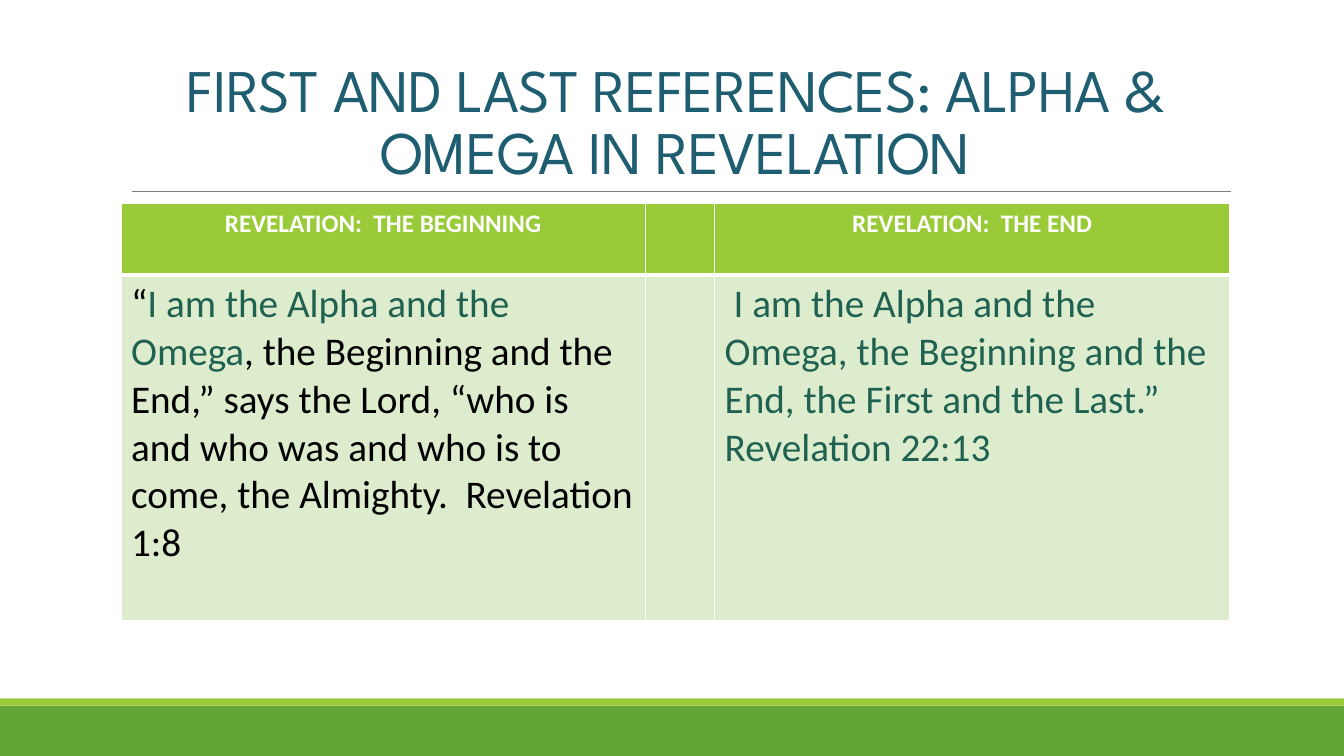
from dataclasses import dataclass

from lxml import etree
from pptx import Presentation
from pptx.dml.color import RGBColor
from pptx.enum.shapes import MSO_CONNECTOR, MSO_SHAPE
from pptx.enum.text import MSO_ANCHOR, MSO_AUTO_SIZE, PP_ALIGN
from pptx.oxml.ns import qn
from pptx.util import Cm, Pt

RECT = MSO_SHAPE.RECTANGLE
LINE = MSO_CONNECTOR.STRAIGHT
BOTTOM = MSO_ANCHOR.BOTTOM
FIXED = MSO_AUTO_SIZE.NONE
CENTER, LEFT = PP_ALIGN.CENTER, PP_ALIGN.LEFT


@dataclass(frozen=True)
class Theme:
    green: str = "63A537"
    lime: str = "99CB38"
    pale: str = "DEECCE"
    rule: str = "808080"
    title: str = "1E5E70"
    quote: str = "206252"
    ink: str = "000000"
    white: str = "FFFFFF"
    display: str = "League Spartan"
    text: str = "Calibri"
    title_size: float = 43.2
    head_size: int = 18
    body_size: int = 28


THEME = Theme()
WIDTH, HEIGHT = 33.87, 19.05
TITLE = "FIRST AND LAST REFERENCES: ALPHA & OMEGA IN REVELATION"
HEADS = ["REVELATION:  THE BEGINNING", "", "REVELATION:  THE END"]
QUOTES = [
    [
        ("“", THEME.ink),
        ("I am the Alpha and the Omega", THEME.quote),
        (
            ", the Beginning and the End,” says the Lord, “who is and who was "
            "and who is to come, the Almighty.  Revelation 1:8",
            THEME.ink,
        ),
    ],
    [],
    [
        (
            " I am the Alpha and the Omega, the Beginning and the End, "
            "the First and the Last.”  Revelation 22:13",
            THEME.quote,
        ),
    ],
]


def format_all(item, values):
    for name, value in values.items():
        setattr(item, name, value)


def paint(fill, color):
    fill.solid()
    fill.fore_color.rgb = RGBColor.from_string(color)


def add_run(para, text, color, **font):
    run = para.add_run()
    run.text = text
    format_all(run.font, font)
    run.font.color.rgb = RGBColor.from_string(color)
    return run


def add_footer(slide, left, top, width, height):
    strip = 0.18
    bands = [
        (top + strip, height - strip, THEME.green),
        (top, strip, THEME.lime),
    ]
    for start, tall, color in bands:
        band = slide.shapes.add_shape(RECT, Cm(left), Cm(start), Cm(width), Cm(tall))
        band.shadow.inherit = False
        paint(band.fill, color)
        band.line.fill.background()


def add_title(slide, left, top, width, height):
    title = slide.shapes.title
    format_all(title, {
        "left": Cm(left), "top": Cm(top),
        "width": Cm(width), "height": Cm(height),
    })
    frame = title.text_frame
    format_all(frame, {
        "word_wrap": True, "auto_size": FIXED, "vertical_anchor": BOTTOM,
    })
    para = frame.paragraphs[0]
    format_all(para, {"alignment": CENTER, "line_spacing": 0.85})
    run = add_run(para, TITLE, THEME.title,
                  name=THEME.display, size=Pt(THEME.title_size))
    run.font.bold = False
    run._r.get_or_add_rPr().set("spc", "-50")

    base = Cm(top + height)
    rule = slide.shapes.add_connector(
        LINE, Cm(left + 0.28), base, Cm(left + width + 0.02), base)
    rule.line.width = Pt(0.5)
    rule.line.color.rgb = RGBColor.from_string(THEME.rule)
    etree.SubElement(rule._element.spPr, qn("a:effectLst"))


def add_edges(cell, base):
    props = cell._tc.get_or_add_tcPr()
    for side, points in {"L": 1, "R": 1, "T": 1, "B": base}.items():
        edge = etree.SubElement(props, qn(f"a:ln{side}"), w=str(Pt(points)))
        fill = etree.SubElement(edge, qn("a:solidFill"))
        etree.SubElement(fill, qn("a:srgbClr"), val=THEME.white)


def fill_cell(cell, runs, color, base, align, font):
    add_edges(cell, base)
    paint(cell.fill, color)
    para = cell.text_frame.paragraphs[0]
    para.alignment = align
    for text, ink in runs:
        add_run(para, text, ink, name=THEME.text, **font)


def add_verses(slide, left, top, width, height):
    head, gap, last = 1.8, 1.75, 12.98
    table = slide.shapes.add_table(
        2, 3, Cm(left), Cm(top), Cm(width), Cm(height)).table
    table.horz_banding = False
    for column, size in zip(table.columns, [width - gap - last, gap, last]):
        column.width = Cm(size)
    for row, size in zip(table.rows, [head, height - head]):
        row.height = Cm(size)

    titles = [[(text, THEME.white)] if text else [] for text in HEADS]
    rows = [
        (titles, THEME.lime, 3, CENTER,
         {"size": Pt(THEME.head_size), "bold": True}),
        (QUOTES, THEME.pale, 1, LEFT,
         {"size": Pt(THEME.body_size), "bold": False}),
    ]
    for row, (cells, *style) in zip(table.rows, rows):
        for cell, runs in zip(row.cells, cells):
            fill_cell(cell, runs, *style)


def main():
    deck = Presentation()
    format_all(deck, {"slide_width": Cm(WIDTH), "slide_height": Cm(HEIGHT)})
    slide = deck.slides.add_slide(deck.slide_layouts[5])
    paint(slide.background.fill, THEME.white)
    left, width = 3.05, 27.94
    add_footer(slide, 0, 17.6, WIDTH, HEIGHT - 17.6)
    add_title(slide, left, 0.79, width, 4.04)
    add_verses(slide, left, 5.13, width, 10.5)
    deck.save("out.pptx")


if __name__ == "__main__":
    main()
